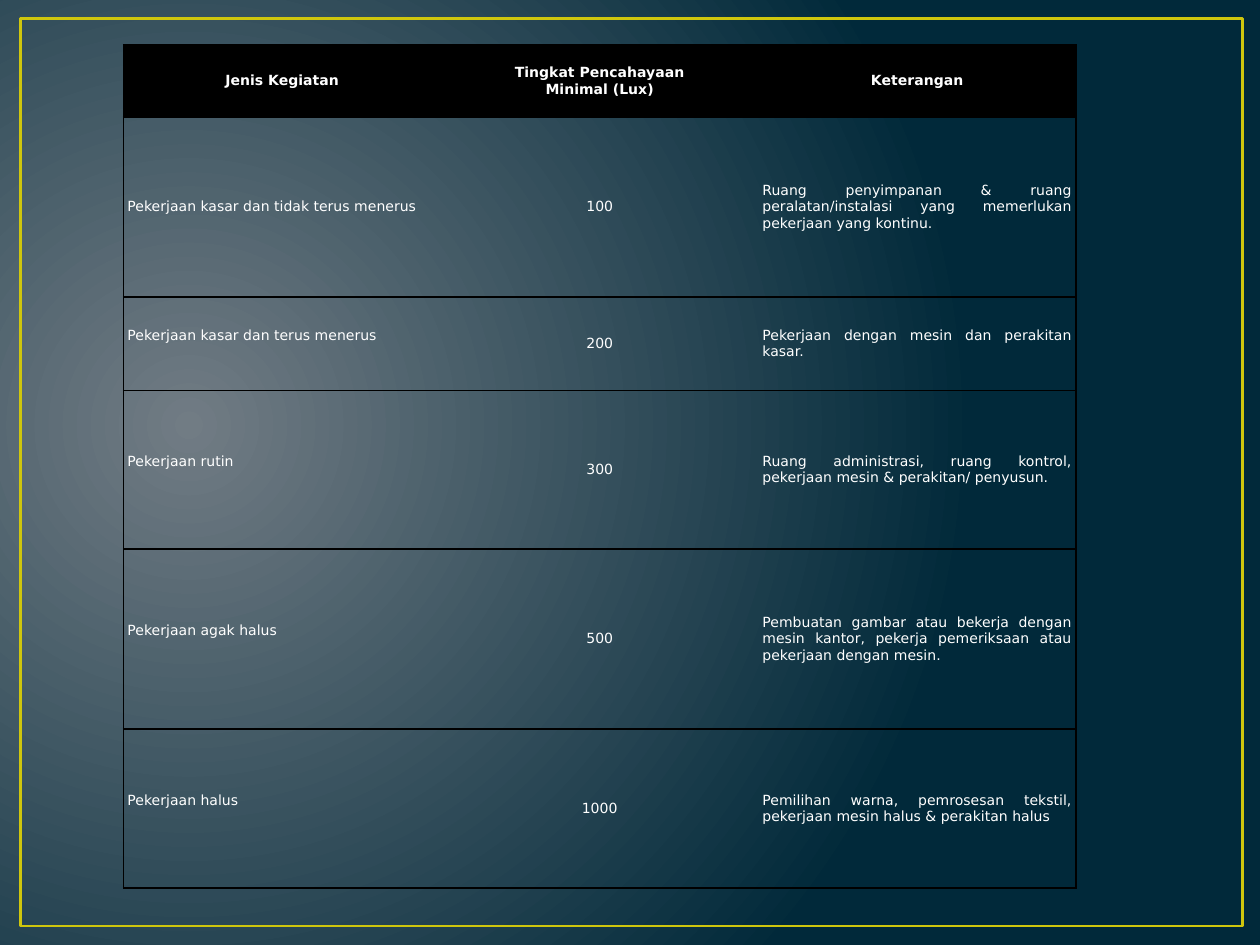
"""Build a slide with a table of minimum lighting levels per kind of work."""
from dataclasses import dataclass

from lxml.etree import SubElement
from pptx import Presentation
from pptx.dml.color import RGBColor
from pptx.enum.shapes import MSO_SHAPE
from pptx.enum.text import MSO_ANCHOR, PP_ALIGN
from pptx.oxml.ns import qn
from pptx.slide import Slide
from pptx.table import _Cell
from pptx.util import Cm, Length, Pt


@dataclass(frozen=True)
class Theme:
    glow: RGBColor = RGBColor(0x71, 0x7C, 0x84)
    night: RGBColor = RGBColor(0x01, 0x29, 0x3A)
    frame: RGBColor = RGBColor(0xCF, 0xC6, 0x0D)
    rule: RGBColor = RGBColor(0, 0, 0)
    text: RGBColor = RGBColor(0xFF, 0xFF, 0xFF)
    font: str = "DejaVu Sans"
    size: Length = Pt(8)
    rule_width: Length = Pt(1)
    frame_width: Length = Pt(1.5)


@dataclass(frozen=True)
class Activity:
    name: str
    lux: str
    remark: str
    height: Length
    raised: bool = True


THEME = Theme()
HEADER = ("Jenis Kegiatan", "Tingkat Pencahayaan\nMinimal (Lux)", "Keterangan")
HEADER_HEIGHT = Cm(1.45)
COLUMN_WIDTH = Cm(6.4)
ACTIVITIES = (
    Activity("Pekerjaan kasar dan tidak terus menerus", "100",
             "Ruang penyimpanan & ruang peralatan/instalasi yang memerlukan pekerjaan yang kontinu.",
             Cm(3.63), raised=False),
    Activity("Pekerjaan kasar dan terus menerus", "200",
             "Pekerjaan dengan mesin dan perakitan kasar.", Cm(1.88)),
    Activity("Pekerjaan rutin", "300",
             "Ruang administrasi, ruang kontrol, pekerjaan mesin & perakitan/ penyusun.", Cm(3.2)),
    Activity("Pekerjaan agak halus", "500",
             "Pembuatan gambar atau bekerja dengan mesin kantor, pekerja pemeriksaan atau "
             "pekerjaan dengan mesin.", Cm(3.63)),
    Activity("Pekerjaan halus", "1000",
             "Pemilihan warna, pemrosesan tekstil, pekerjaan mesin halus & perakitan halus", Cm(3.2)),
)


def paint_background(slide: Slide) -> None:
    fill = slide.background.fill
    fill.gradient()
    for stop, color in zip(fill.gradient_stops, (THEME.glow, THEME.night)):
        stop.color.rgb = color
    gradient = next(slide.element.iter(qn("a:gradFill")))
    gradient.remove(gradient.find(qn("a:lin")))
    circle = SubElement(gradient, qn("a:path"), path="circle")
    SubElement(circle, qn("a:fillToRect"), l="15000", t="50000", r="85000", b="60000")


def draw_frame(slide: Slide) -> None:
    frame = slide.shapes.add_shape(MSO_SHAPE.RECTANGLE, Cm(0.41), Cm(0.38), Cm(24.64), Cm(18.29))
    frame.shadow.inherit = False
    frame.fill.background()
    frame.line.color.rgb = THEME.frame
    frame.line.width = THEME.frame_width


def rule_cell(cell: _Cell, column: int) -> None:
    ruled = {"L": column == 0, "R": column == len(HEADER) - 1, "T": True, "B": True}
    properties = cell._tc.get_or_add_tcPr()
    for side, visible in ruled.items():
        rule = SubElement(properties, qn(f"a:ln{side}"), w=str(THEME.rule_width))
        if visible:
            solid = SubElement(rule, qn("a:solidFill"))
            SubElement(solid, qn("a:srgbClr"), val=str(THEME.rule))
        else:
            SubElement(rule, qn("a:noFill"))


def write_cell(cell: _Cell, text: str, column: int, heading: bool, raised: bool) -> None:
    rule_cell(cell, column)
    if heading:
        cell.fill.solid()
        cell.fill.fore_color.rgb = THEME.rule
    else:
        cell.fill.background()
    cell.vertical_anchor = MSO_ANCHOR.MIDDLE
    cell.margin_left = cell.margin_right = Cm(0.08)
    cell.margin_top = Cm(0.05)
    cell.margin_bottom = Cm(0.38) if raised else Cm(0.05)
    frame = cell.text_frame
    for index, line in enumerate(text.split("\n")):
        paragraph = frame.add_paragraph() if index else frame.paragraphs[0]
        paragraph.alignment = PP_ALIGN.CENTER if heading or column == 1 else PP_ALIGN.JUSTIFY
        run = paragraph.add_run()
        run.text = line
        run.font.name = THEME.font
        run.font.size = THEME.size
        run.font.bold = heading
        run.font.color.rgb = THEME.text


def draw_table(slide: Slide) -> None:
    heights = [HEADER_HEIGHT, *(activity.height for activity in ACTIVITIES)]
    table = slide.shapes.add_table(len(heights), len(HEADER), Cm(2.49), Cm(0.91),
                                   COLUMN_WIDTH * len(HEADER), sum(heights)).table
    table.horz_banding = False
    for column in table.columns:
        column.width = COLUMN_WIDTH
    for row, height in zip(table.rows, heights):
        row.height = height
    for column, title in enumerate(HEADER):
        write_cell(table.cell(0, column), title, column, heading=True, raised=False)
    for row, activity in enumerate(ACTIVITIES, start=1):
        for column, text in enumerate((activity.name, activity.lux, activity.remark)):
            write_cell(table.cell(row, column), text, column, heading=False,
                       raised=activity.raised and column == 0)


def main() -> None:
    presentation = Presentation()
    presentation.slide_width = Cm(25.4)
    presentation.slide_height = Cm(19.05)
    slide = presentation.slides.add_slide(presentation.slide_layouts[6])
    paint_background(slide)
    draw_frame(slide)
    draw_table(slide)
    presentation.save("out.pptx")


if __name__ == "__main__":
    main()
